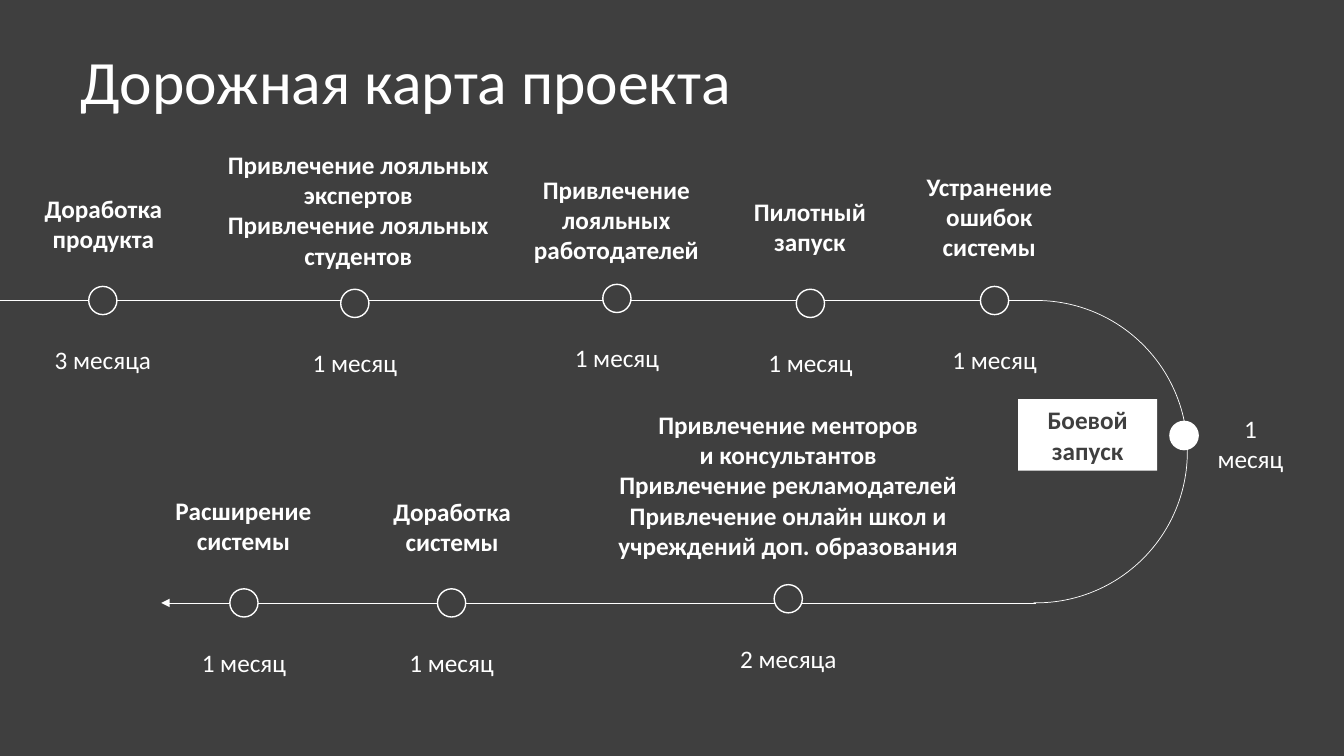
"""Build a project roadmap slide with a timeline that turns back on itself."""
from lxml import etree
from pptx import Presentation
from pptx import util as u
from pptx.dml.color import RGBColor
from pptx.enum import shapes, text
from pptx.oxml.ns import qn

COLORS = {"background": "3F3F3F", "foreground": "FFFFFF"}
FONT = "Calibri"
WIDTH, HEIGHT = u.Inches(13.333), u.Inches(7.5)
UPPER, LOWER, TURN = 39.75, 79.75, 77.1
DOT_WIDTH, DOT_HEIGHT = 2.1, 3.73
TEXT_WIDTH, LINE_HEIGHT, PADDING = 13.88, 4.04, 1.33
DURATION_GAP = 5.2

# Shares of the slide in percent: dot x, dot y, label x, label top, label width, label lines
MILESTONES = [
    (7.65, UPPER, 7.69, 24.93, TEXT_WIDTH, 2, "Доработка продукта", "3 месяца"),
    (26.4, 40.13, 26.66, 19.07, 21.38, 4,
     "Привлечение лояльных экспертов\nПривлечение лояльных студентов", "1 месяц"),
    (45.9, 39.47, 45.86, 22.4, TEXT_WIDTH, 3, "Привлечение лояльных работодателей", "1 месяц"),
    (60.3, 40.13, 60.26, 25.33, TEXT_WIDTH, 2, "Пилотный запуск", "1 месяц"),
    (74, UPPER, 73.61, 22, TEXT_WIDTH, 3, "Устранение ошибок системы", "1 месяц"),
    (18.15, LOWER, 18.11, 64.8, TEXT_WIDTH, 2, "Расширение системы", "1 месяц"),
    (33.6, LOWER, 33.64, 64.93, TEXT_WIDTH, 2, "Доработка системы", "1 месяц"),
    (58.65, 79.2, 58.65, 53.47, 33.45, 5,
     "Привлечение менторов\vи консультантов\nПривлечение рекламодателей\n"
     "Привлечение онлайн школ и учреждений доп. образования", "2 месяца"),
]


def color(name):
    """Return a named colour."""
    return RGBColor.from_string(COLORS[name])


def area(left, top, width, height):
    """Turn percentages of the slide into lengths."""
    return [u.Emu(round(share * side / 100)) for share, side in
            zip((left, top, width, height), (WIDTH, HEIGHT, WIDTH, HEIGHT))]


def write(frame, content, size=18, bold=False, ink="foreground", align=text.PP_ALIGN.CENTER):
    """Fill a text frame with formatted paragraphs and line breaks."""
    frame.word_wrap = True
    for index, line in enumerate(content.split("\n")):
        paragraph = frame.add_paragraph() if index else frame.paragraphs[0]
        paragraph.alignment = align
        for part, words in enumerate(line.split("\v")):
            if part:
                paragraph.add_line_break()
            run = paragraph.add_run()
            run.text = words
            run.font.name, run.font.size, run.font.bold = FONT, u.Pt(size), bold
            run.font.color.rgb = color(ink)


def add_title(slide, content):
    """Place the slide title."""
    title = slide.shapes.title
    title.left, title.top, title.width, title.height = area(5.25, 5.47, 64.28, 11.33)
    write(title.text_frame, content, size=44, align=text.PP_ALIGN.LEFT)
    title.text_frame.vertical_anchor = text.MSO_ANCHOR.MIDDLE
    title.text_frame.paragraphs[0].line_spacing = 0.9


def add_label(slide, center, top, width, lines, content, bold=False):
    """Add a centred text box as high as its lines."""
    box = slide.shapes.add_textbox(
        *area(center - width / 2, top, width, lines * LINE_HEIGHT + PADDING))
    write(box.text_frame, content, bold=bold)


def add_shape(slide, kind, place, fill=None, line_width=0):
    """Add a preset shape with an optional fill and outline."""
    shape = slide.shapes.add_shape(kind, *area(*place))
    shape.shadow.inherit = False
    if fill:
        shape.fill.solid()
        shape.fill.fore_color.rgb = color(fill)
    else:
        shape.fill.background()
    if line_width:
        shape.line.color.rgb = color("foreground")
        shape.line.width = u.Pt(line_width)
    else:
        shape.line.fill.background()
    return shape


def add_dot(slide, x, y, fill="background"):
    """Mark a point on the timeline."""
    place = (x - DOT_WIDTH / 2, y - DOT_HEIGHT / 2, DOT_WIDTH, DOT_HEIGHT)
    add_shape(slide, shapes.MSO_SHAPE.OVAL, place, fill, 1)


def add_track(slide, start, end, y, arrow=False):
    """Draw a straight stretch of the timeline."""
    ends = area(start, y, end, y)
    track = slide.shapes.add_connector(shapes.MSO_CONNECTOR.STRAIGHT, *ends)
    track.line.color.rgb = color("foreground")
    track.line.width = u.Pt(0.5)
    properties = track.line._get_or_add_ln()
    if arrow:
        etree.SubElement(properties, qn("a:tailEnd"), type="triangle")
    etree.SubElement(properties.getparent(), qn("a:effectLst"))


def add_timeline(slide):
    """Draw both stretches of the timeline and the turn between them."""
    add_track(slide, 0, TURN, UPPER)
    add_track(slide, TURN, 12, LOWER, arrow=True)
    turn = add_shape(slide, shapes.MSO_SHAPE.ARC,
                     (65.85, UPPER, 22.5, LOWER - UPPER), line_width=0.5)
    turn.adjustments[0], turn.adjustments[1] = 162, 54.56


def add_milestone(slide, x, y, label_x, label_top, label_width, lines, label, duration):
    """Add a dot with its label above and its duration below."""
    add_dot(slide, x, y)
    add_label(slide, label_x, label_top, label_width, lines, label, bold=True)
    add_label(slide, x, y + DURATION_GAP, TEXT_WIDTH, 1, duration)


def add_launch(slide):
    """Add the highlighted launch at the turn."""
    add_dot(slide, 88.1, 57.6, "foreground")
    box = add_shape(slide, shapes.MSO_SHAPE.RECTANGLE, (75.75, 52.8, 10.35, 9.47), "foreground")
    write(box.text_frame, "Боевой запуск", bold=True, ink="background")
    add_label(slide, 93.04, 54, TEXT_WIDTH, 2, "1\vмесяц")


def main():
    """Build and save the presentation."""
    presentation = Presentation()
    presentation.slide_width, presentation.slide_height = WIDTH, HEIGHT
    slide = presentation.slides.add_slide(presentation.slide_layouts.get_by_name("Title Only"))
    slide.background.fill.solid()
    slide.background.fill.fore_color.rgb = color("background")
    add_title(slide, "Дорожная карта проекта")
    add_timeline(slide)
    for milestone in MILESTONES:
        add_milestone(slide, *milestone)
    add_launch(slide)
    presentation.save("out.pptx")


if __name__ == "__main__":
    main()
